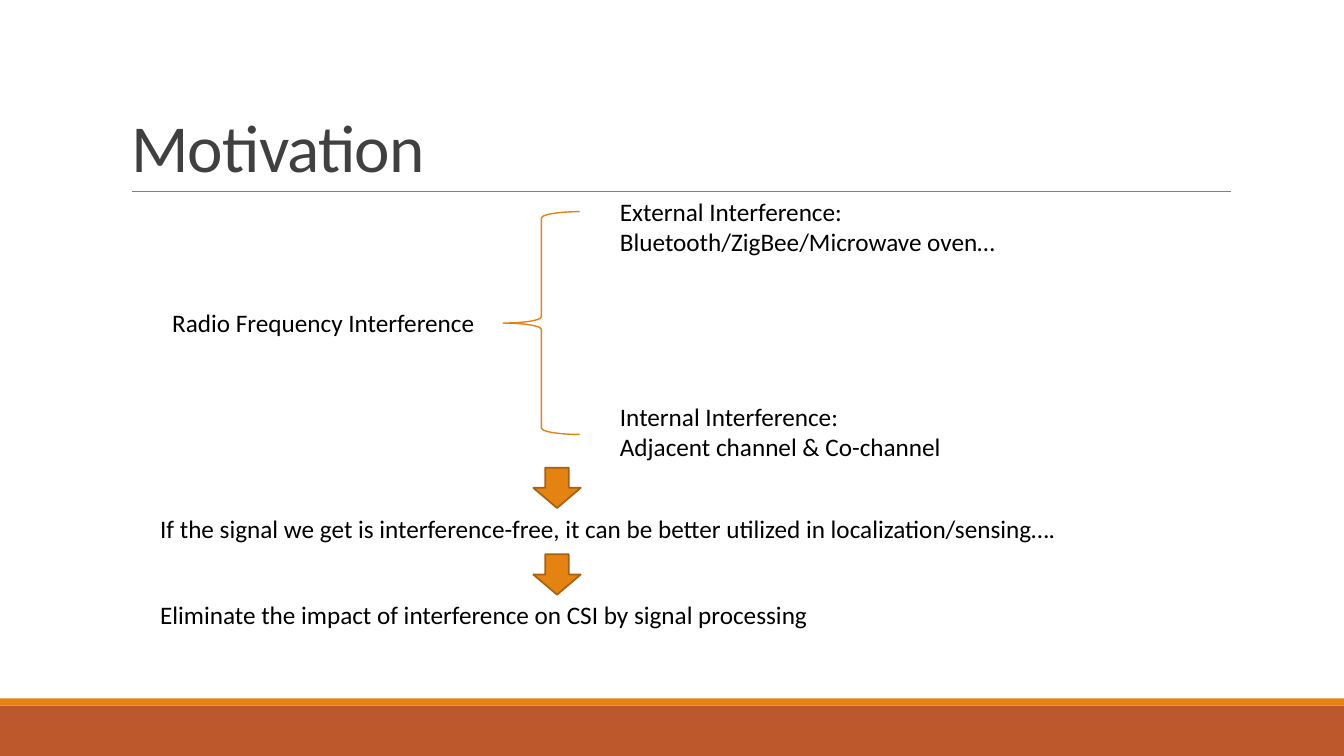
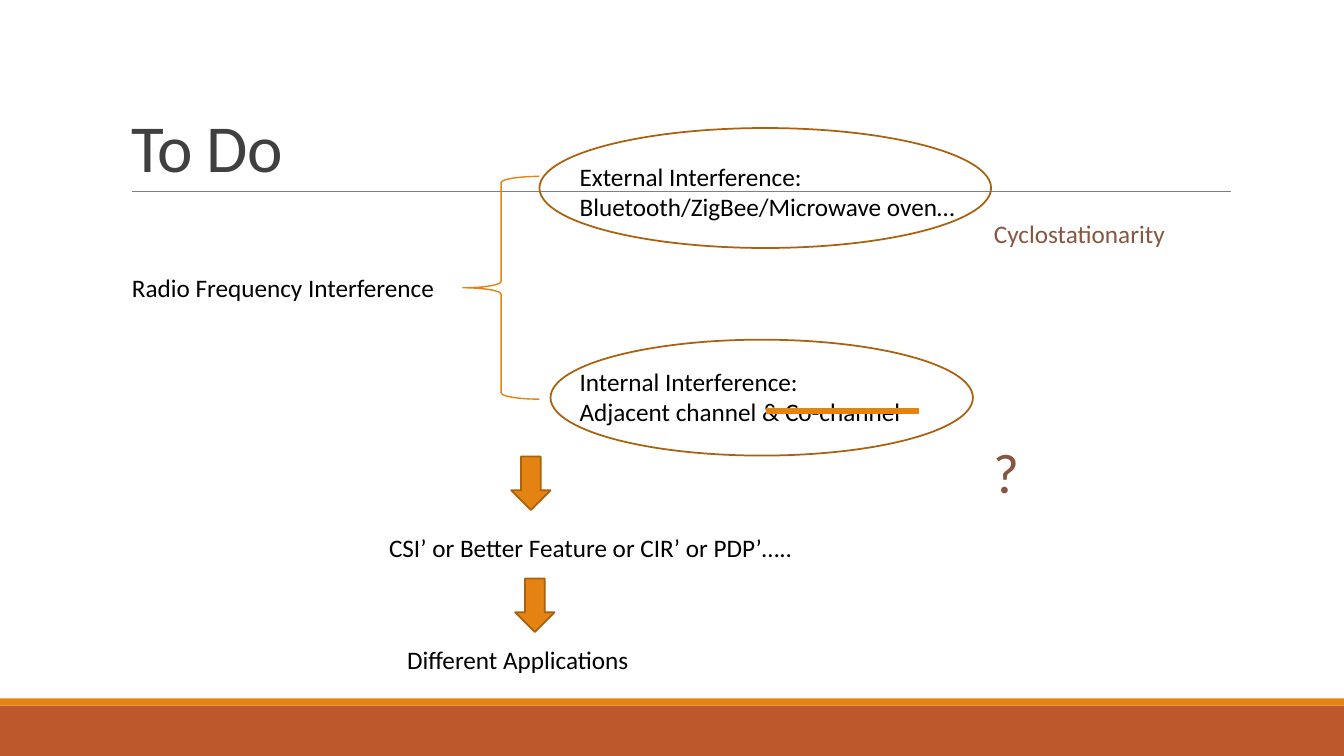
import pptx
import pptx.util
import pptx.dml.color
import pptx.enum.shapes
import pptx.enum.text
import pptx.oxml.ns
import lxml.etree

SHAPE = pptx.enum.shapes.MSO_SHAPE
COLORS = {
    "orange": "E48312",
    "rust": "BD582C",
    "edge": "A9610D",
    "rule": "808080",
    "title": "404040",
    "text": "000000",
    "note": "865640",
}
FONT = "Calibri"
WIDTH, HEIGHT = 1333, 750


def px(n):
    """Turn a length in px (100 to the inch) into EMU."""
    return pptx.util.Emu(n * 9144)


def rgb(name):
    """Return the named colour."""
    return pptx.dml.color.RGBColor.from_string(COLORS[name])


class Deck:
    """Hold the style, the presentation and the current slide."""

    def __init__(self):
        """Start an empty widescreen presentation."""
        self.prs = pptx.Presentation()
        self.prs.slide_width = px(WIDTH)
        self.prs.slide_height = px(HEIGHT)
        self.s = None

    def slide(self, title):
        """Add a slide with the bands, the rule and the title."""
        self.s = self.prs.slides.add_slide(self.prs.slide_layouts[5])
        self.shape(SHAPE.RECTANGLE, 0, 700, WIDTH, 50, fill="rust")
        self.shape(SHAPE.RECTANGLE, 0, 693, WIDTH, 7, fill="orange")
        self.line(131, 190, 1221, 190, "rule", 0.5)
        sp = self.s.shapes.title
        sp.left, sp.top, sp.width, sp.height = map(px, (120, 31, 1100, 159))
        tf = sp.text_frame
        tf.auto_size = pptx.enum.text.MSO_AUTO_SIZE.NONE
        tf.vertical_anchor = pptx.enum.text.MSO_ANCHOR.BOTTOM
        p = tf.paragraphs[0]
        p.alignment = pptx.enum.text.PP_ALIGN.LEFT
        p.line_spacing = 0.85
        r = self.run(p, title, 48, "title")
        r._r.get_or_add_rPr().set("spc", "-50")

    def run(self, p, text, size, color):
        """Add a styled run to a paragraph."""
        r = p.add_run()
        r.text = text
        r.font.name = FONT
        r.font.size = pptx.util.Pt(size)
        r.font.color.rgb = rgb(color)
        return r

    def text(self, x, y, w, h, *lines, size=18, color="text"):
        """Add a text box with one paragraph for each line."""
        tf = self.s.shapes.add_textbox(px(x), px(y), px(w), px(h)).text_frame
        tf.word_wrap = True
        tf.auto_size = pptx.enum.text.MSO_AUTO_SIZE.SHAPE_TO_FIT_TEXT
        for i, line in enumerate(lines):
            p = tf.add_paragraph() if i else tf.paragraphs[0]
            self.run(p, line, size, color)

    def shape(self, kind, x, y, w, h, fill=None, line=None, weight=1.25):
        """Add a preset shape with an optional fill and outline."""
        sp = self.s.shapes.add_shape(kind, px(x), px(y), px(w), px(h))
        sp.shadow.inherit = False
        for part, color in ((sp.fill, fill), (sp.line.fill, line)):
            if color:
                part.solid()
                part.fore_color.rgb = rgb(color)
            else:
                part.background()
        if line:
            sp.line.width = pptx.util.Pt(weight)

    def line(self, x1, y1, x2, y2, color, weight):
        """Add a straight line."""
        c = self.s.shapes.add_connector(
            pptx.enum.shapes.MSO_CONNECTOR.STRAIGHT,
            px(x1), px(y1), px(x2), px(y2))
        c.line.color.rgb = rgb(color)
        c.line.width = pptx.util.Pt(weight)
        lxml.etree.SubElement(
            c._element.spPr, pptx.oxml.ns.qn("a:effectLst"))

    def arrow(self, x, y, w, h):
        """Add a block arrow that points down."""
        self.shape(SHAPE.DOWN_ARROW, x, y, w, h, "orange", "edge")

    def ellipse(self, x, y, w, h):
        """Add an outlined ellipse."""
        self.shape(SHAPE.OVAL, x, y, w, h, line="edge")

    def interference(self, x, y):
        """Add the braced tree of interference kinds."""
        self.text(x, y + 110, 364, 40, "Radio Frequency Interference")
        self.shape(SHAPE.LEFT_BRACE, x + 338, y + 20, 76, 221,
                   line="orange", weight=1)
        self.text(x + 444, y, 515, 71, "External Interference:",
                  "Bluetooth/ZigBee/Microwave oven…")
        self.text(x + 444, y + 203, 515, 71, "Internal Interference:",
                  "Adjacent channel & Co-channel")


def main():
    """Build and save both slides."""
    d = Deck()

    d.slide("Motivation")
    d.interference(161, 190)
    conclusions = (
        "If the signal we get is interference-free, it can be better "
        "utilized in localization/sensing….",
        "Eliminate the impact of interference on CSI by signal processing",
    )
    for i, conclusion in enumerate(conclusions):
        y = 464 + 86 * i
        d.arrow(529, y, 47, 40)
        d.text(149, y + 40, 1031, 40, conclusion)

    d.slide("To Do")
    d.interference(121, 155)
    d.ellipse(535, 127, 448, 119)
    d.text(976, 212, 244, 40, "Cyclostationarity", color="note")
    d.line(760, 408, 912, 408, "orange", 4.5)
    d.ellipse(546, 337, 419, 115)
    d.text(976, 429, 205, 77, "?", size=40, color="note")
    d.arrow(507, 453, 39, 53)
    d.text(376, 523, 472, 40, "CSI’ or Better Feature or CIR’ or PDP’…..")
    d.arrow(511, 574, 39, 53)
    d.text(394, 634, 290, 40, "Different Applications")

    d.prs.save("out.pptx")


if __name__ == "__main__":
    main()
